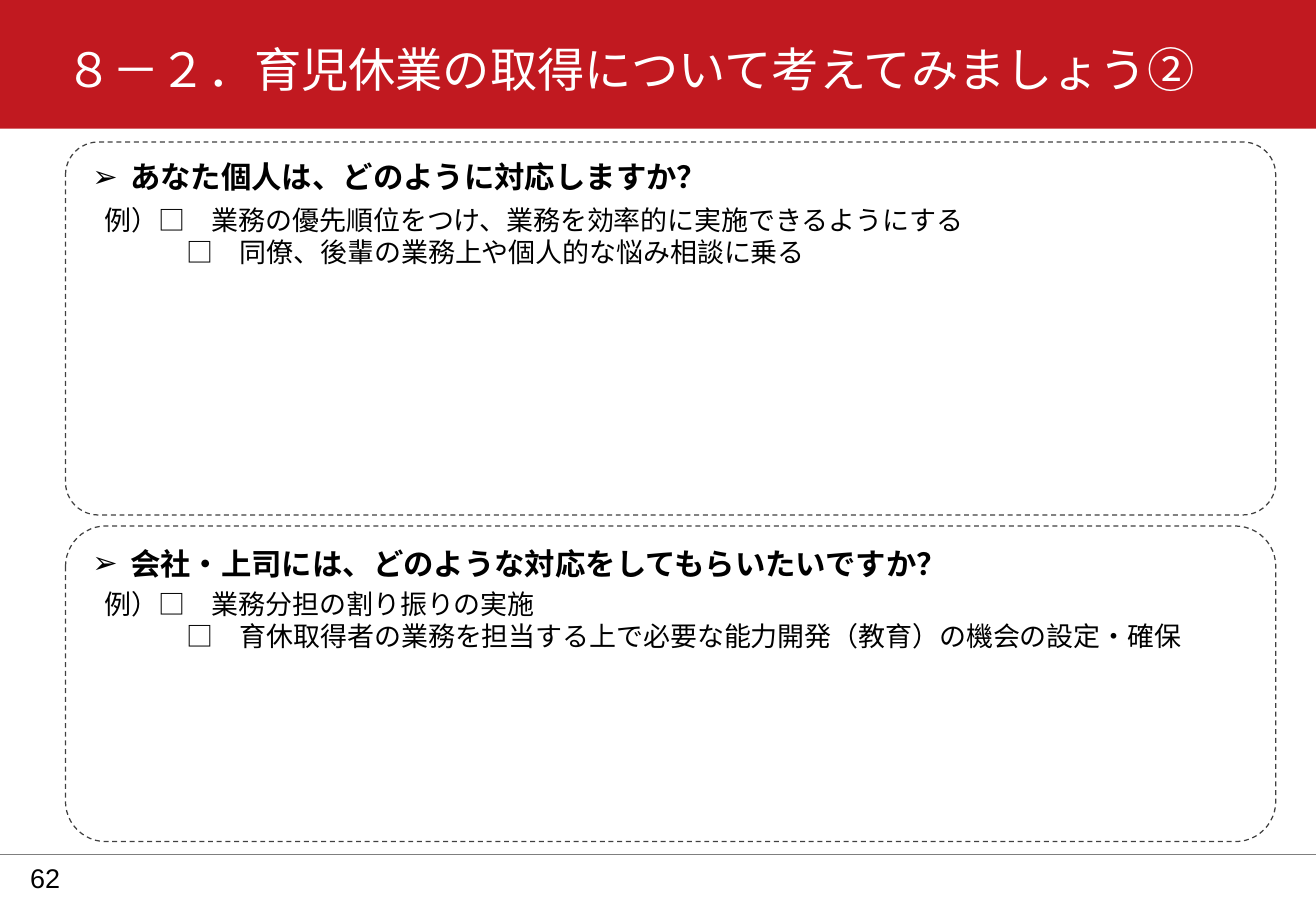
from dataclasses import dataclass
from lxml.etree import SubElement
from pptx import Presentation
from pptx.dml.color import RGBColor
from pptx.enum.dml import MSO_LINE
from pptx.enum.shapes import MSO_CONNECTOR, MSO_SHAPE
from pptx.enum.text import MSO_ANCHOR, MSO_AUTO_SIZE, PP_ALIGN
from pptx.oxml.ns import qn
from pptx.util import Cm, Pt

SANS = "Noto Sans CJK JP"
LATIN = "Arial"
BLACK = "000000"
WIDE, HIGH = 27.51, 19.05
LEFT = 1.93


@dataclass
class Panel:
    top: float
    high: float
    curve: float
    head: float
    body: float
    ask: str
    lines: tuple[str, str]


PANELS = [
    Panel(2.97, 7.8, 0.088, 3.15, 4.11, "あなた個人は、どのように対応しますか？",
          ("例）□　業務の優先順位をつけ、業務を効率的に実施できるようにする",
           "□　同僚、後輩の業務上や個人的な悩み相談に乗る")),
    Panel(11, 6.6, 0.128, 11.23, 12.14, "会社・上司には、どのような対応をしてもらいたいですか？",
          ("例）□　業務分担の割り振りの実施",
           "□　育休取得者の業務を担当する上で必要な能力開発（教育）の機会の設定・確保")),
]


def paint(part, shade: str) -> None:
    part.rgb = RGBColor.from_string(shade)


def set_box(frame, side: float, top: float, base: float) -> None:
    frame.word_wrap = True
    frame.margin_left = frame.margin_right = Cm(side)
    frame.margin_top, frame.margin_bottom = Cm(top), Cm(base)


def add_run(para, text: str, size: float, face: str, shade: str = BLACK,
            bold: bool = False) -> None:
    run = para.add_run()
    run.text = text
    font = run.font
    font.size, font.name, font.bold = Pt(size), face, bold
    paint(font.color, shade)
    SubElement(font._element, qn("a:ea"), typeface=SANS)


def add_text(slide, left: float, top: float, wide: float, high: float,
             side: float, edge: float):
    box = slide.shapes.add_textbox(Cm(left), Cm(top), Cm(wide), Cm(high))
    set_box(box.text_frame, side, edge, edge)
    return box.text_frame


def add_bullet(para) -> None:
    props = para._p.get_or_add_pPr()
    props.set("marL", str(Cm(0.79)))
    props.set("indent", str(-Cm(0.79)))
    SubElement(props, qn("a:buFont"), typeface=LATIN)
    SubElement(props, qn("a:buChar"), char="➢")


def add_panel(slide, panel: Panel) -> None:
    frame = slide.shapes.add_shape(MSO_SHAPE.ROUNDED_RECTANGLE, Cm(1.37),
                                   Cm(panel.top), Cm(25.3), Cm(panel.high))
    frame.adjustments[0] = panel.curve
    frame.shadow.inherit = False
    frame.fill.background()
    paint(frame.line.color, "404040")
    frame.line.width = Pt(0.75)
    frame.line.dash_style = MSO_LINE.DASH

    head = add_text(slide, LEFT, panel.head, 25.3, 3.3, 0, 0.15).paragraphs[0]
    add_bullet(head)
    head.line_spacing = Pt(22)
    add_run(head, panel.ask, 18, SANS, bold=True)

    body = add_text(slide, LEFT, panel.body, 23.34, 1.63, 0.25, 0.13)
    body.auto_size = MSO_AUTO_SIZE.SHAPE_TO_FIT_TEXT
    for step, line in enumerate(panel.lines):
        para = body.add_paragraph() if step else body.paragraphs[0]
        para._p.get_or_add_pPr().set("marL", str(Cm(1.71 * step)))
        para.line_spacing = Pt(19.4)
        add_run(para, line, 16, SANS)


def add_title(slide) -> None:
    band = slide.shapes.add_shape(MSO_SHAPE.RECTANGLE, 0, 0, Cm(WIDE), Cm(2.69))
    band.shadow.inherit = False
    band.fill.solid()
    paint(band.fill.fore_color, "C11920")
    band.line.fill.background()

    title = slide.shapes.title
    band.element.addnext(title.element)
    title.left, title.top = Cm(1.37), Cm(0.76)
    title.width, title.height = Cm(26.14), Cm(1.8)
    frame = title.text_frame
    set_box(frame, 0, 0, 0.15)
    frame.auto_size = MSO_AUTO_SIZE.NONE
    frame.vertical_anchor = MSO_ANCHOR.TOP
    para = frame.paragraphs[0]
    para.alignment = PP_ALIGN.LEFT
    para.line_spacing = Pt(36)
    add_run(para, "８－２．育児休業の取得について考えてみましょう②", 28, LATIN, "FFFFFF")


def add_foot(slide) -> None:
    rule = slide.shapes.add_connector(MSO_CONNECTOR.STRAIGHT, 0, Cm(17.86),
                                      Cm(WIDE), Cm(17.86))
    SubElement(rule.element.spPr, qn("a:effectLst"))
    paint(rule.line.color, "7F7F7F")
    rule.line.width = Pt(0.25)
    page = add_text(slide, 0.63, 17.86, 1.22, 1, 0, 0.13)
    page.vertical_anchor = MSO_ANCHOR.MIDDLE
    add_run(page.paragraphs[0], "62", 16, LATIN)


def main() -> None:
    deck = Presentation()
    deck.slide_width, deck.slide_height = Cm(WIDE), Cm(HIGH)
    slide = deck.slides.add_slide(deck.slide_layouts[5])
    add_title(slide)
    for panel in PANELS:
        add_panel(slide, panel)
    add_foot(slide)
    deck.save("out.pptx")


if __name__ == "__main__":
    main()
